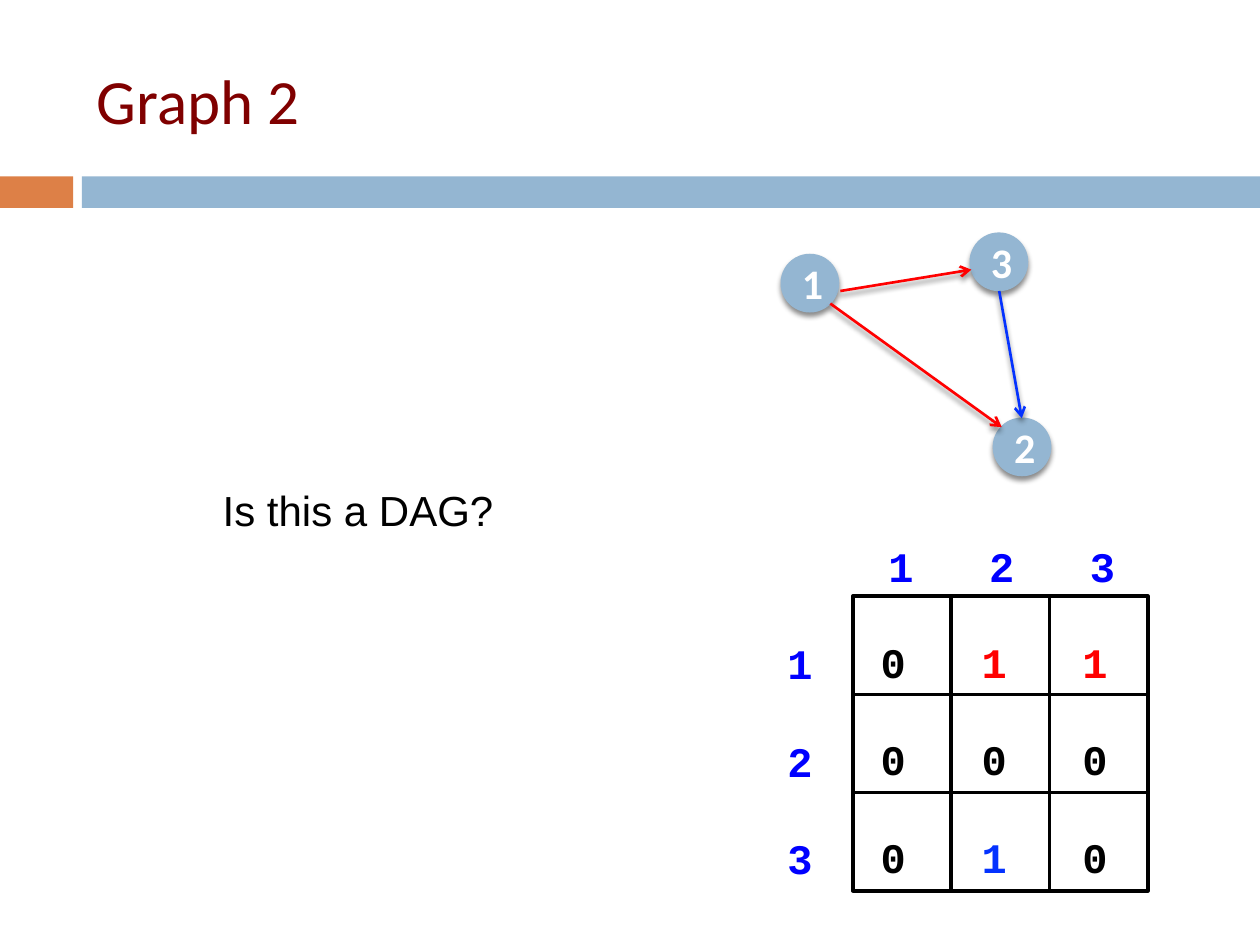
"""Build the Graph 2 slide: a directed graph and its adjacency matrix."""
from lxml import etree
from pptx import Presentation
from pptx.dml.color import RGBColor
from pptx.enum.shapes import MSO_CONNECTOR as CONN, MSO_SHAPE as SHAPE
from pptx.enum.text import MSO_ANCHOR as ANCHOR, PP_ALIGN as ALIGN
from pptx.oxml import parse_xml
from pptx.oxml.ns import nsdecls, qn
from pptx.util import Pt

BLUE, RED, BLACK, LABEL, STEEL = "0432FF", "FF0000", "000000", "0000FF", "94B6D2"
BANDS = [(0, 41.8, "DD8047"), (46.8, 673.2, STEEL)]
NODES = [("1", 446.4, 145.4), ("3", 554.4, 133.2), ("2", 567.6, 239)]
EDGES = [
    ((474.5, 173.5), (572.4, 244.1), RED),
    ((480.2, 166.3), (555.1, 154.1), RED),
    ((571, 166.3), (583.9, 239), BLUE),
]
LABELS = [
    [("\t1\t2\t3", LABEL)],
    [("1", LABEL)],
    [("2", LABEL)],
    [("3", LABEL)],
]
MATRIX = [
    [("0", BLACK), ("\t1\t1", RED)],
    [("0\t0\t0", BLACK)],
    [("0", BLACK), ("\t1", BLUE), ("\t0", BLACK)],
]
NODE, CELL, GRID_X, GRID_Y, TAB = 32.8, 56.16, 487.4, 340.6, 57.6


def rgb(value):
    return RGBColor.from_string(value)


def style(r, name, size, color, bold=False):
    r.font.name, r.font.size, r.font.bold = name, Pt(size), bold
    r.font.color.rgb = rgb(color)


def add_shape(shapes, kind, x, y, w, h, fill=None, line=None, width=1):
    sp = shapes.add_shape(kind, Pt(x), Pt(y), Pt(w), Pt(h))
    sp.shadow.inherit = False
    if fill:
        sp.fill.solid()
        sp.fill.fore_color.rgb = rgb(fill)
    else:
        sp.fill.background()
    if line:
        sp.line.color.rgb = rgb(line)
        sp.line.width = Pt(width)
    else:
        sp.line.fill.background()
    return sp


def add_shadow(sp):
    props = sp._element.spPr
    for old in props.findall(qn("a:effectLst")):
        props.remove(old)
    props.append(parse_xml(
        f'<a:effectLst {nsdecls("a")}><a:outerShdw blurRad="{Pt(3)}" dist="{Pt(2.4)}" '
        'dir="5400000" rotWithShape="0"><a:srgbClr val="000000"><a:alpha val="45000"/>'
        '</a:srgbClr></a:outerShdw></a:effectLst>'))


def add_text(s, x, y, w, h):
    tf = s.shapes.add_textbox(Pt(x), Pt(y), Pt(w), Pt(h)).text_frame
    tf.word_wrap = True
    return tf


def add_line_of_text(s, text, box, name, size, color):
    tf = add_text(s, *box)
    tf.text = text
    style(tf.paragraphs[0].runs[0], name, size, color)
    return tf


def add_rows(s, rows, box):
    tf = add_text(s, *box)
    tf.margin_left = tf.margin_right = Pt(2.88)
    tf.margin_top = tf.margin_bottom = 0
    for i, row in enumerate(rows):
        p = tf.add_paragraph() if i else tf.paragraphs[0]
        p.line_spacing, p.space_before = 1.6, Pt(9.6)
        tabs = etree.SubElement(p._p.get_or_add_pPr(), qn("a:tabLst"))
        for n in range(1, 4):
            etree.SubElement(tabs, qn("a:tab"), pos=str(Pt(TAB * n)), algn="l")
        for text, color in row:
            r = p.add_run()
            r.text = text
            style(r, "Courier New", 24, color, True)


def add_node(s, text, x, y):
    sp = add_shape(s.shapes, SHAPE.OVAL, x, y, NODE, NODE, STEEL, STEEL, 0.79)
    add_shadow(sp)
    tf = sp.text_frame
    tf.text, tf.vertical_anchor = text, ANCHOR.MIDDLE
    p = tf.paragraphs[0]
    p.alignment = ALIGN.CENTER
    style(p.runs[0], "Calibri", 24, "FFFFFF", True)


def add_edge(s, start, end, color):
    line = s.shapes.add_connector(CONN.STRAIGHT, *map(Pt, start + end))
    line.line.color.rgb = rgb(color)
    line.line.width = Pt(1.5)
    etree.SubElement(line.line._get_or_add_ln(), qn("a:tailEnd"), type="arrow")
    add_shadow(line)


def main():
    prs = Presentation()
    prs.slide_width, prs.slide_height = Pt(720), Pt(540)
    s = prs.slides.add_slide(prs.slide_layouts[6])
    for x, w, color in BANDS:
        add_shape(s.shapes, SHAPE.RECTANGLE, x, 100.8, w, 18, color)
    add_rows(s, LABELS, (447.1, 291.6, 276.5, 264.2))
    title = add_line_of_text(s, "Graph 2", (48.2, 18, 642.2, 77.8), "Calibri", 36, "800000")
    title.vertical_anchor = ANCHOR.MIDDLE
    grid = s.shapes.add_group_shape().shapes
    for i in range(9):
        row, col = divmod(i, 3)
        add_shape(grid, SHAPE.RECTANGLE, GRID_X + col * CELL, GRID_Y + row * CELL,
                  CELL, CELL, line=BLACK, width=2)
    add_rows(s, MATRIX, (500.4, 346.3, 234.7, 185))
    for node in NODES:
        add_node(s, *node)
    for edge in EDGES:
        add_edge(s, *edge)
    add_line_of_text(s, "Is this a DAG?", (120.2, 273.6, 203.8, 36), "Arial", 24, BLACK)
    prs.save("out.pptx")


if __name__ == "__main__":
    main()
